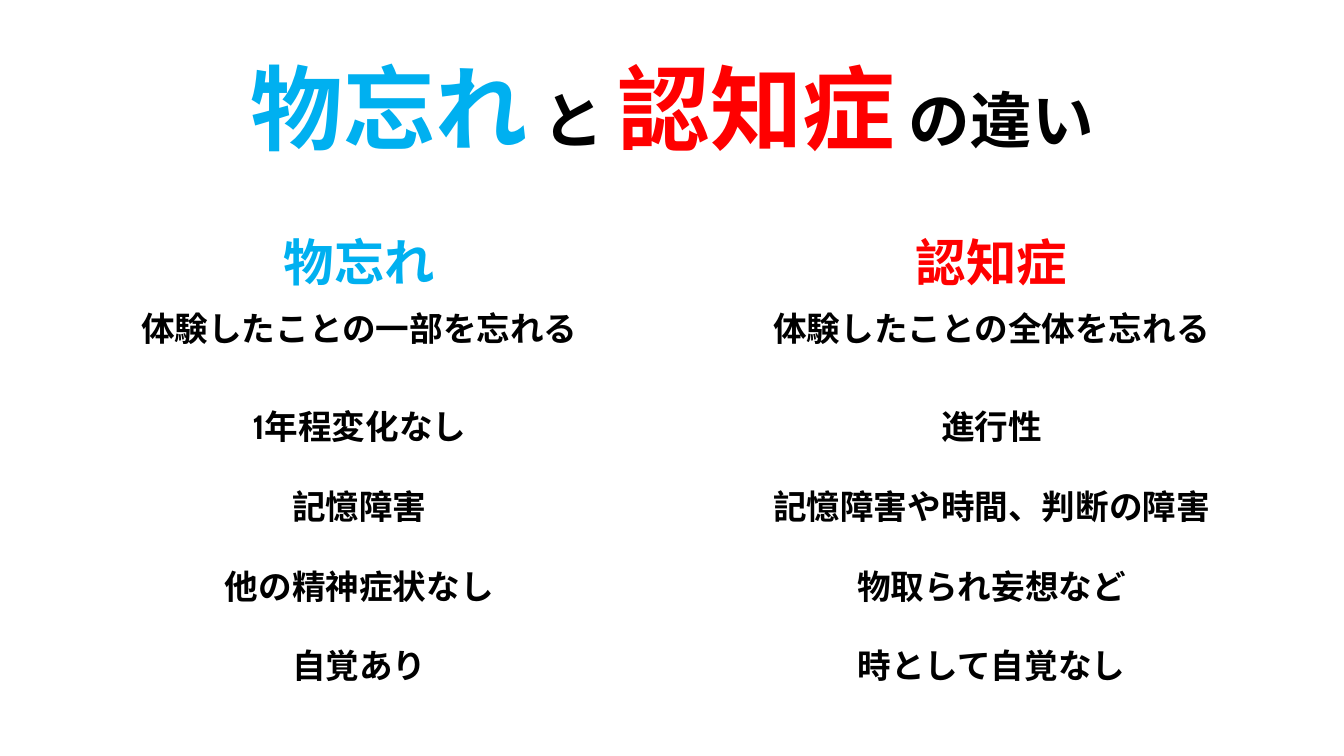
from pptx import Presentation
from pptx.dml.color import RGBColor
from pptx.enum.text import MSO_ANCHOR, PP_ALIGN
from pptx.util import Cm, Pt

BLUE = RGBColor(0x00, 0xB0, 0xF0)
RED = RGBColor(0xFF, 0x00, 0x00)
BLACK = RGBColor(0x00, 0x00, 0x00)
WHITE = RGBColor(0xFF, 0xFF, 0xFF)
FONT = "Cabin"

TITLE_RUNS = [
    ("物忘れ", 66, BLUE),
    (" と ", 44, BLACK),
    ("認知症", 66, RED),
    (" の違い", 44, BLACK),
]
HEADINGS = [("物忘れ", BLUE), ("認知症", RED)]
COMPARISONS = [
    ("体験したことの一部を忘れる", "体験したことの全体を忘れる"),
    ("1年程変化なし", "進行性"),
    ("記憶障害", "記憶障害や時間、判断の障害"),
    ("他の精神症状なし", "物取られ妄想など"),
    ("自覚あり", "時として自覚なし"),
]
COLUMN_WIDTH = Cm(15.93)
ROW_HEIGHT = Cm(2.01)
FIRST_COMPARISON_HEIGHT = Cm(2.21)


def format_run(r, size, color):
    r.font.name = FONT
    r.font.size = Pt(size)
    r.font.bold = True
    r.font.color.rgb = color


def add_title(slide):
    tf = slide.shapes.add_textbox(Cm(2.34), Cm(1.02), Cm(29.21), Cm(3.68)).text_frame
    tf.word_wrap = True
    tf.vertical_anchor = MSO_ANCHOR.MIDDLE
    p = tf.paragraphs[0]
    p.alignment = PP_ALIGN.CENTER
    p.line_spacing = 0.9
    for text, size, color in TITLE_RUNS:
        r = p.add_run()
        r.text = text
        format_run(r, size, color)


def fill_cell(cell, text, size, color, anchor):
    cell.fill.solid()
    cell.fill.fore_color.rgb = WHITE
    cell.vertical_anchor = anchor
    p = cell.text_frame.paragraphs[0]
    p.text = text
    p.alignment = PP_ALIGN.CENTER
    format_run(p.runs[0], size, color)


def add_comparison_table(slide):
    row_count = len(COMPARISONS) + 1
    table = slide.shapes.add_table(
        row_count, len(HEADINGS), Cm(1.09), Cm(5.49),
        COLUMN_WIDTH * len(HEADINGS), ROW_HEIGHT * row_count,
    ).table
    table.horz_banding = False
    for column in table.columns:
        column.width = COLUMN_WIDTH
    for row in table.rows:
        row.height = ROW_HEIGHT
    table.rows[1].height = FIRST_COMPARISON_HEIGHT

    for j, (text, color) in enumerate(HEADINGS):
        fill_cell(table.cell(0, j), text, 36, color, MSO_ANCHOR.TOP)
    for i, texts in enumerate(COMPARISONS, start=1):
        anchor = MSO_ANCHOR.TOP if i == 1 else MSO_ANCHOR.MIDDLE
        for j, text in enumerate(texts):
            fill_cell(table.cell(i, j), text, 24, BLACK, anchor)


def main():
    prs = Presentation()
    prs.slide_width = Cm(33.87)
    prs.slide_height = Cm(19.05)
    slide = prs.slides.add_slide(prs.slide_layouts[6])
    add_title(slide)
    add_comparison_table(slide)
    prs.save("out.pptx")


if __name__ == "__main__":
    main()
